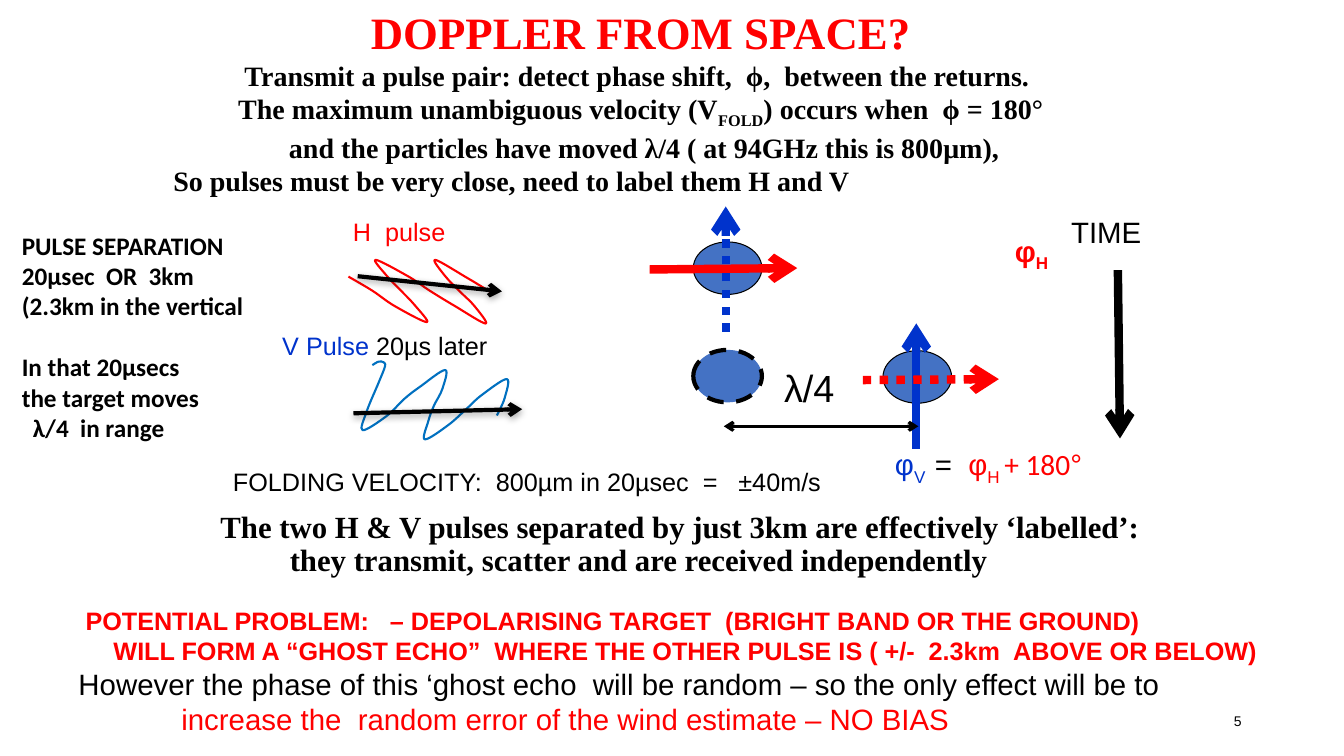
"""Build the slide on Doppler velocity from a polarised pulse pair."""
from math import cos, radians, sin
from lxml.etree import SubElement
from pptx import Presentation
from pptx.dml.color import RGBColor as RGB
from pptx.enum.dml import MSO_LINE as DASH
from pptx.enum.shapes import MSO_CONNECTOR as CON, MSO_SHAPE as SHAPE
from pptx.enum.text import MSO_ANCHOR as ANCHOR, PP_ALIGN as ALIGN
from pptx.oxml.ns import qn
from pptx.util import Pt

HUE = {"red": "FF0000", "blue": "0033CC", "wave": "0070C0",
       "disc": "4472C4", "ink": "000000"}
TIMES, SANS, CAL = "Times New Roman", "Arial", "Calibri"
SUB = {"base": -25000}

H_WAVE = [(0, 12), (17, 22), (33, 33), (56, 44.5), (47, 32), (37, 21.5),
          (27, 11), (19.5, 0), (43, 12), (58, 22), (76, 33), (98, 45.5),
          (90, 33), (80, 23), (69, 11.5), (62, 0), (85, 13), (101.5, 23)]
V_WAVE = [(7, 3), (11.5, 0.5), (15, 1), (16, 4), (11.5, 15.5), (3, 36),
          (0, 49.5), (17, 39.5), (30, 27), (41, 18.5), (59, 6.5), (57, 20),
          (51, 32), (47, 43), (44.5, 56), (61, 46), (74, 34.5), (85, 24.5),
          (103, 13), (101.5, 26.5), (96, 39)]


def color(hue):
    """Return the named colour."""
    return RGB.from_string(HUE[hue])


def write(slide, box, paras, look, anchor=ANCHOR.TOP):
    """Add a text box; a paragraph is (format, runs), a run (text, changes)."""
    frame = slide.shapes.add_textbox(*map(Pt, box)).text_frame
    frame.word_wrap = True
    frame.vertical_anchor = anchor
    for i, (form, runs) in enumerate(paras):
        para = frame.paragraphs[0] if i == 0 else frame.add_paragraph()
        form = dict(form)
        para._p.get_or_add_pPr().set("marL", str(Pt(form.pop("indent", 0))))
        for key, val in form.items():
            setattr(para, key, val)
        for text, change in runs:
            style = {"hue": "ink", "name": SANS, "bold": False, **look, **change}
            run = para.add_run()
            run.text = text
            run.font.color.rgb = color(style.pop("hue"))
            base = style.pop("base", 0)
            if base:
                run._r.get_or_add_rPr().set("baseline", str(base))
            style["size"] = Pt(style["size"])
            for key, val in style.items():
                setattr(run.font, key, val)


def stroke(shape, hue, width, dash=None):
    """Format an outline."""
    shape.line.color.rgb = color(hue)
    shape.line.width = Pt(width)
    if dash:
        shape.line.dash_style = dash


def arrow(slide, start, end, hue, width, dash=None, both=False, shade=False):
    """Draw an arrow from start to end."""
    line = slide.shapes.add_connector(CON.STRAIGHT, *map(Pt, (*start, *end)))
    stroke(line, hue, width, dash)
    props = line.element.spPr
    edge = props.find(qn("a:ln"))
    for tag in ("a:headEnd", "a:tailEnd") if both else ("a:tailEnd",):
        SubElement(edge, qn(tag), type="arrow")
    fx = SubElement(props, qn("a:effectLst"))
    if shade:
        cast = SubElement(fx, qn("a:outerShdw"), blurRad=str(Pt(5)),
                          dist=str(Pt(1.8)), dir="5400000", rotWithShape="0")
        tint = SubElement(cast, qn("a:srgbClr"), val=HUE["ink"])
        SubElement(tint, qn("a:alpha"), val="35000")


def bend(shape):
    """Turn the straight parts of an outline into smooth curves."""
    parts = list(shape.element.iter(qn("a:lnTo")))
    knots = [(int(dot.get("x")), int(dot.get("y")))
             for dot in shape.element.iter(qn("a:pt"))]
    ends = [knots[0], *knots, knots[-1]]
    for part, a, b, c, d in zip(parts, ends, ends[1:], ends[2:], ends[3:]):
        curve = SubElement(part.getparent(), qn("a:cubicBezTo"))
        out = [q + (r - p) / 6 for p, q, r in zip(a, b, c)]
        back = [q - (r - p) / 6 for p, q, r in zip(b, c, d)]
        for x, y in (out, back, c):
            SubElement(curve, qn("a:pt"), x=str(round(x)), y=str(round(y)))
        part.getparent().remove(part)


def wave(slide, left, top, mid, knots, turn, hue):
    """Draw a smooth open curve in a frame turned about its middle."""
    co, si = cos(radians(turn)), sin(radians(turn))
    dots = []
    for x, y in knots:
        dx, dy = x - mid[0], y - mid[1]
        dots.append((Pt(left + mid[0] + dx * co + dy * si),
                     Pt(top + mid[1] + dy * co - dx * si)))
    form = slide.shapes.build_freeform(*dots[0])
    form.add_line_segments(dots[1:], close=False)
    shape = form.convert_to_shape()
    bend(shape)
    shape.rotation = turn
    shape.fill.background()
    shape.shadow.inherit = False
    stroke(shape, hue, 1.5)


def disc(slide, left, top, width=0.75, dash=None):
    """Draw one target particle."""
    shape = slide.shapes.add_shape(SHAPE.OVAL, *map(Pt, (left, top, 49, 37.5)))
    shape.fill.solid()
    shape.fill.fore_color.rgb = color("disc")
    shape.shadow.inherit = False
    stroke(shape, "ink", width, dash)


def head(slide, box):
    """Write the heading and the lines below it."""
    mid = {"alignment": ALIGN.CENTER, "indent": 23}
    write(slide, box, [
        (mid, [("DOPPLER FROM SPACE?", {"size": 32, "hue": "red"})]),
        (mid, [("Transmit a pulse pair: detect phase shift,  ϕ,  between the returns. ", {})]),
        (mid, [("The maximum unambiguous velocity (V", {}), ("FOLD", SUB),
               (") occurs when  ϕ = 180°", {})]),
        (mid, [(" and the particles have moved λ/4 ( at 94GHz this is 800μm),", {})]),
        ({"indent": 24.5}, [("So pulses must be very close, need to label them H and V", {})]),
    ], {"size": 20, "name": TIMES, "bold": True})


def gap(slide, box):
    """Write the note on pulse separation."""
    rows = [("PULSE SEPARATION", {}), ("20µsec  OR  3km", {}),
            ("(2.3km in the vertical", {}),
            ("In that 20µsecs", {"space_before": Pt(22)}),
            ("the target moves", {}), ("λ/4  in range", {"indent": 8})]
    write(slide, box, [(form, [(text, {})]) for text, form in rows],
          {"size": 18, "name": CAL, "bold": True})


def pulses(slide, box):
    """Draw the H and V pulses with their labels."""
    x, y, wide, high = box
    look = {"size": 18}
    write(slide, (x + 50.5, y + 0.3, 82, 51), [({}, [("H  pulse", {"hue": "red"})])], look)
    wave(slide, x + 54.5, y + 34.5, (53.7, 19.8), H_WAVE, 25.7, "red")
    arrow(slide, (x + 61, y + 46.3), (x + 164, y + 57.1), "ink", 3, shade=True)
    wave(slide, x + 64.7, y + 106.7, (46.4, 27.4), V_WAVE, 217.8, "wave")
    arrow(slide, (x + 58, y + 144.2), (x + 178.5, y + 141.3), "ink", 3, shade=True)
    write(slide, (x, y + 81.5, wide, 29),
          [({}, [("V Pulse ", {"hue": "blue"}), ("20µs later", {})])], look)
    write(slide, (x - 93.7, y + 178.7, 710, 51),
          [({"indent": 58.5}, [("FOLDING VELOCITY:  800µm in 20µsec  =   ±40m/s", {})])], look)


def echoes(slide, box):
    """Draw the moving target, its echoes and the time arrow."""
    x, y, wide, high = box
    disc(slide, x + 166.7, y + 103)
    disc(slide, x + 31.2, y + 25.3)
    disc(slide, x + 31.2, y + 102.4, 3, DASH.DASH)
    for start, end, hue, dash in [
            ((54.4, 89.5), (54.4, 0), "blue", DASH.ROUND_DOT),
            ((0, 45), (105.5, 44), "red", None),
            ((190.5, 173), (190.5, 83.5), "blue", None),
            ((152.3, 124), (249.5, 123.3), "red", DASH.ROUND_DOT),
            ((334.5, 45.5), (336, 165.7), "ink", None)]:
        arrow(slide, (x + start[0], y + start[1]), (x + end[0], y + end[1]), hue, 6, dash)
    arrow(slide, (x + 53, y + 157), (x + 192, y + 157), "ink", 2.25, both=True)
    write(slide, (x + 89, y + 109.5, 53, 40), [({}, [("λ/4", {})])], {"size": 27})
    write(slide, (x + 253.8, y + 15.2, 40, 60), [({}, [("φ", {}), ("H", SUB)])],
          {"size": 21, "hue": "red", "bold": True})
    write(slide, (x + 294, y + 2.2, 66, 32), [({}, [("TIME", {})])], {"size": 21})
    write(slide, (x + 168.2, y + 167.8, 208, 32), [({}, [
        ("φ", {"hue": "blue"}), ("V  ", {"hue": "blue", **SUB}),
        ("=  ", {"hue": "ink"}), ("φ", {}), ("H ", SUB),
        ("+ 180", {"name": CAL}), ("°", {})])], {"size": 21, "hue": "red"})


def label(slide, box):
    """Write the statement on labelled pulses."""
    rows = [("The two H & V pulses separated by just 3km are effectively ‘labelled’:", 0),
            ("they transmit, scatter and are received independently", 49.5)]
    write(slide, box, [({"indent": dent, "line_spacing": 0.9}, [(text, {})])
                       for text, dent in rows],
          {"size": 22, "name": TIMES, "bold": True}, ANCHOR.MIDDLE)


def risk(slide, box):
    """Write the potential problem and its effect."""
    loud = {"size": 18, "bold": True, "hue": "red"}
    rows = [("POTENTIAL PROBLEM:   – DEPOLARISING TARGET  (BRIGHT BAND OR THE GROUND)", 60, loud),
            ("WILL FORM A “GHOST ECHO”  WHERE THE OTHER PULSE IS ( +/-  2.3km  ABOVE OR BELOW)",
             80, loud),
            ("However the phase of this ‘ghost echo  will be random – so the only effect will be to",
             55, {}),
            ("increase the  random error of the wind estimate – NO BIAS", 128.5, {"hue": "red"})]
    write(slide, box, [({"indent": dent}, [(text, look)]) for text, dent, look in rows],
          {"size": 21})


def main():
    """Build and save the slide."""
    deck = Presentation()
    deck.slide_width, deck.slide_height = Pt(960), Pt(540)
    slide = deck.slides.add_slide(deck.slide_layouts[6])
    head(slide, (92.2, -0.4, 708, 143))
    gap(slide, (8.5, 160.8, 174, 160))
    pulses(slide, (194.5, 151, 428, 210))
    echoes(slide, (464, 147.5, 376, 200))
    label(slide, (150.4, 360.3, 710, 58))
    risk(slide, (-6, 429, 918, 101))
    write(slide, (678, 500.5, 216, 29), [({"alignment": ALIGN.RIGHT}, [("5", {})])],
          {"size": 10}, ANCHOR.MIDDLE)
    deck.save("out.pptx")


if __name__ == "__main__":
    main()
